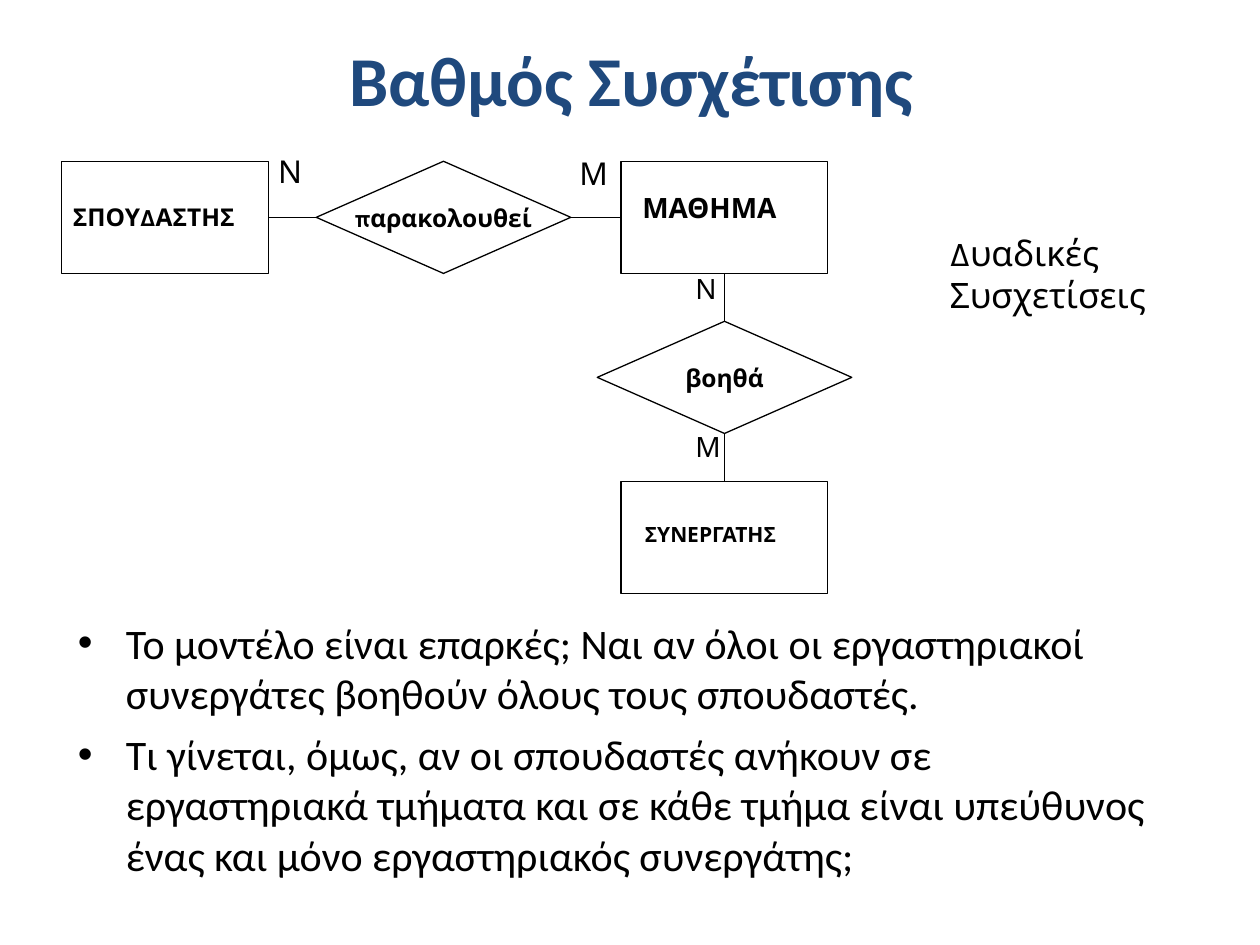
from dataclasses import dataclass

from lxml import etree
from pptx import Presentation
from pptx.dml.color import RGBColor
from pptx.enum import shapes, text
from pptx.oxml import ns
from pptx.util import Inches, Pt


@dataclass(frozen=True)
class Theme:
    ink: RGBColor = RGBColor(0x00, 0x00, 0x00)
    accent: RGBColor = RGBColor(0x1F, 0x49, 0x7D)
    heading_font: str = "Calibri"
    diagram_font: str = "Karla"
    title: int = 40
    body: int = 24
    note: int = 20
    large: int = 18
    medium: int = 16
    small: int = 14
    tiny: int = 12
    line: float = 0.75


THEME = Theme()
TOP, LEFT, BOTTOM, RIGHT = range(4)
ENTITY_SIZE = (1.64, 0.89)
RELATION_SIZE = (2.02, 0.89)


def format_hanging(paragraph, bullet):
    properties = paragraph._p.get_or_add_pPr()
    properties.set("marL", str(Inches(0.38)))
    properties.set("indent", str(-Inches(0.38)))
    if bullet:
        font = etree.SubElement(properties, ns.qn("a:buFont"))
        font.set("typeface", "Arial")
        etree.SubElement(properties, ns.qn("a:buChar")).set("char", bullet)


def write_text(shape, lines, size, font=THEME.diagram_font, color=THEME.ink,
               bold=False, align=text.PP_ALIGN.LEFT, anchor=text.MSO_ANCHOR.TOP,
               wrap=True, space_before=0, hanging=False, bullet=None):
    frame = shape.text_frame
    frame.word_wrap = wrap
    frame.vertical_anchor = anchor
    for index, line in enumerate(lines):
        paragraph = frame.add_paragraph() if index else frame.paragraphs[0]
        paragraph.alignment = align
        paragraph.space_before = Pt(space_before)
        if hanging:
            format_hanging(paragraph, bullet)
        run = paragraph.add_run()
        run.text = line
        run.font.name = font
        run.font.size = Pt(size)
        run.font.bold = bold
        run.font.color.rgb = color


def add_text(slide, box, lines, size, **text_format):
    shape = slide.shapes.add_textbox(*map(Inches, box))
    write_text(shape, lines, size, **text_format)


def add_outline(slide, kind, position, size):
    shape = slide.shapes.add_shape(kind, *map(Inches, position + size))
    shape.shadow.inherit = False
    shape.fill.background()
    shape.line.color.rgb = THEME.ink
    shape.line.width = Pt(THEME.line)
    return shape


def add_entity(slide, position, name, label_box, size):
    shape = add_outline(slide, shapes.MSO_SHAPE.RECTANGLE, position, ENTITY_SIZE)
    add_text(slide, label_box, [name], size, bold=True)
    return shape


def add_relation(slide, position, name):
    shape = add_outline(slide, shapes.MSO_SHAPE.DIAMOND, position, RELATION_SIZE)
    write_text(shape, [name], THEME.small, bold=True, wrap=False,
               align=text.PP_ALIGN.CENTER, anchor=text.MSO_ANCHOR.MIDDLE)
    return shape


def join(slide, start, start_side, end, end_side):
    connector = slide.shapes.add_connector(shapes.MSO_CONNECTOR.STRAIGHT, 0, 0, 0, 0)
    connector.begin_connect(start, start_side)
    connector.end_connect(end, end_side)
    connector.line.color.rgb = THEME.ink
    connector.line.width = Pt(THEME.line)
    etree.SubElement(connector._element.spPr, ns.qn("a:effectLst"))


def add_diagram(slide):
    student = add_entity(slide, (0.49, 1.28), "ΣΠΟΥΔΑΣΤΗΣ",
                         (0.48, 1.55, 1.76, 0.51), THEME.small)
    course = add_entity(slide, (4.93, 1.28), "ΜΑΘΗΜΑ",
                        (5, 1.46, 1.44, 0.56), THEME.medium)
    assistant = add_entity(slide, (4.93, 3.82), "ΣΥΝΕΡΓΑΤΗΣ",
                           (5.02, 4.09, 1.5, 0.46), THEME.tiny)
    attends = add_relation(slide, (2.51, 1.28), "παρακολουθεί")
    helps = add_relation(slide, (4.74, 2.55), "βοηθά")

    join(slide, attends, LEFT, student, RIGHT)
    join(slide, course, LEFT, attends, RIGHT)
    join(slide, helps, TOP, course, BOTTOM)
    join(slide, assistant, TOP, helps, BOTTOM)

    for symbol, box, size in (
        ("Ν", (2.11, 1.16, 0.43, 0.61), THEME.large),
        ("Μ", (4.5, 1.17, 0.46, 0.61), THEME.large),
        ("Ν", (5.42, 2.11, 0.4, 0.56), THEME.medium),
        ("Μ", (5.42, 3.36, 0.43, 0.56), THEME.medium),
    ):
        add_text(slide, box, [symbol], size)


def main():
    presentation = Presentation()
    presentation.slide_width = Inches(10)
    presentation.slide_height = Inches(7.5)
    slide = presentation.slides.add_slide(presentation.slide_layouts[6])

    add_text(slide, (0.51, 0.13, 9, 0.99), ["Βαθμός Συσχέτισης"], THEME.title,
             font=THEME.heading_font, color=THEME.accent, bold=True,
             align=text.PP_ALIGN.CENTER, anchor=text.MSO_ANCHOR.MIDDLE)
    add_diagram(slide)
    add_text(slide, (7.44, 1.79, 2.41, 1.39), ["Δυαδικές", "Συσχετίσεις"],
             THEME.note, hanging=True)
    add_text(slide, (0.52, 4.85, 8.76, 2.33), [
        "Το μοντέλο είναι επαρκές; Ναι αν όλοι οι εργαστηριακοί "
        "συνεργάτες βοηθούν όλους τους σπουδαστές.",
        "Τι γίνεται, όμως, αν οι σπουδαστές ανήκουν σε εργαστηριακά τμήματα "
        "και σε κάθε τμήμα είναι υπεύθυνος ένας και μόνο εργαστηριακός συνεργάτης;",
    ], THEME.body, font=THEME.heading_font, space_before=6, hanging=True, bullet="•")

    presentation.save("out.pptx")


if __name__ == "__main__":
    main()
